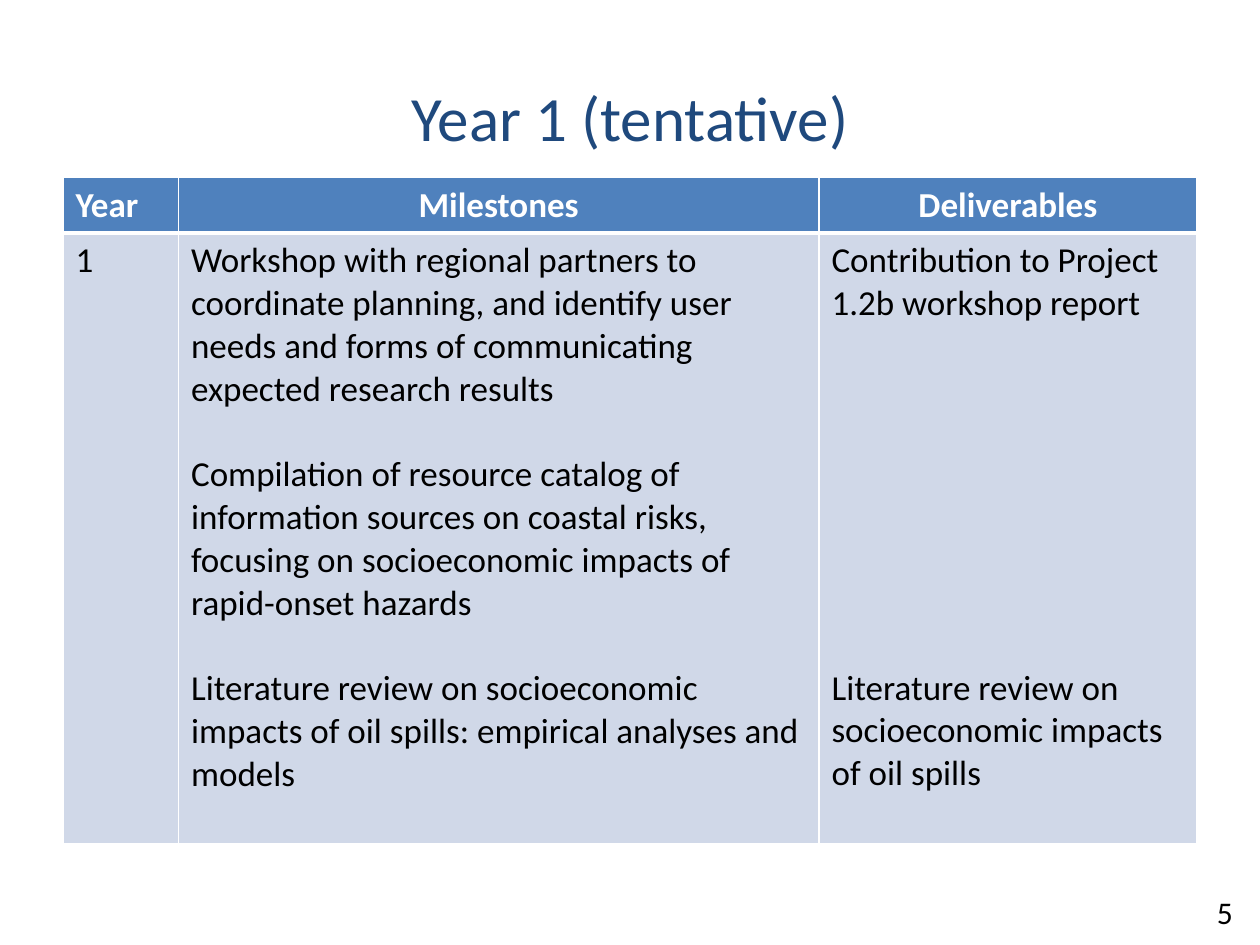
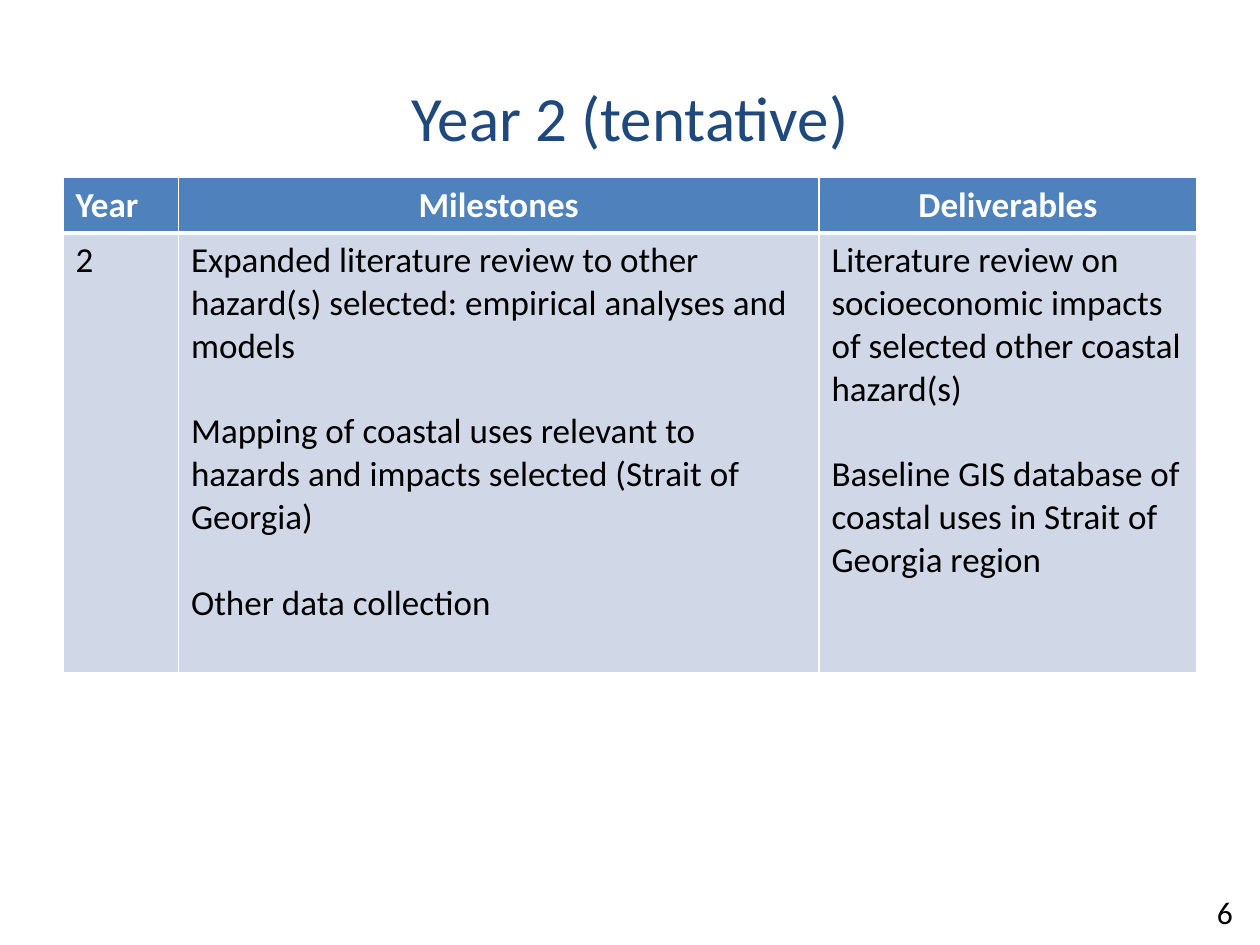
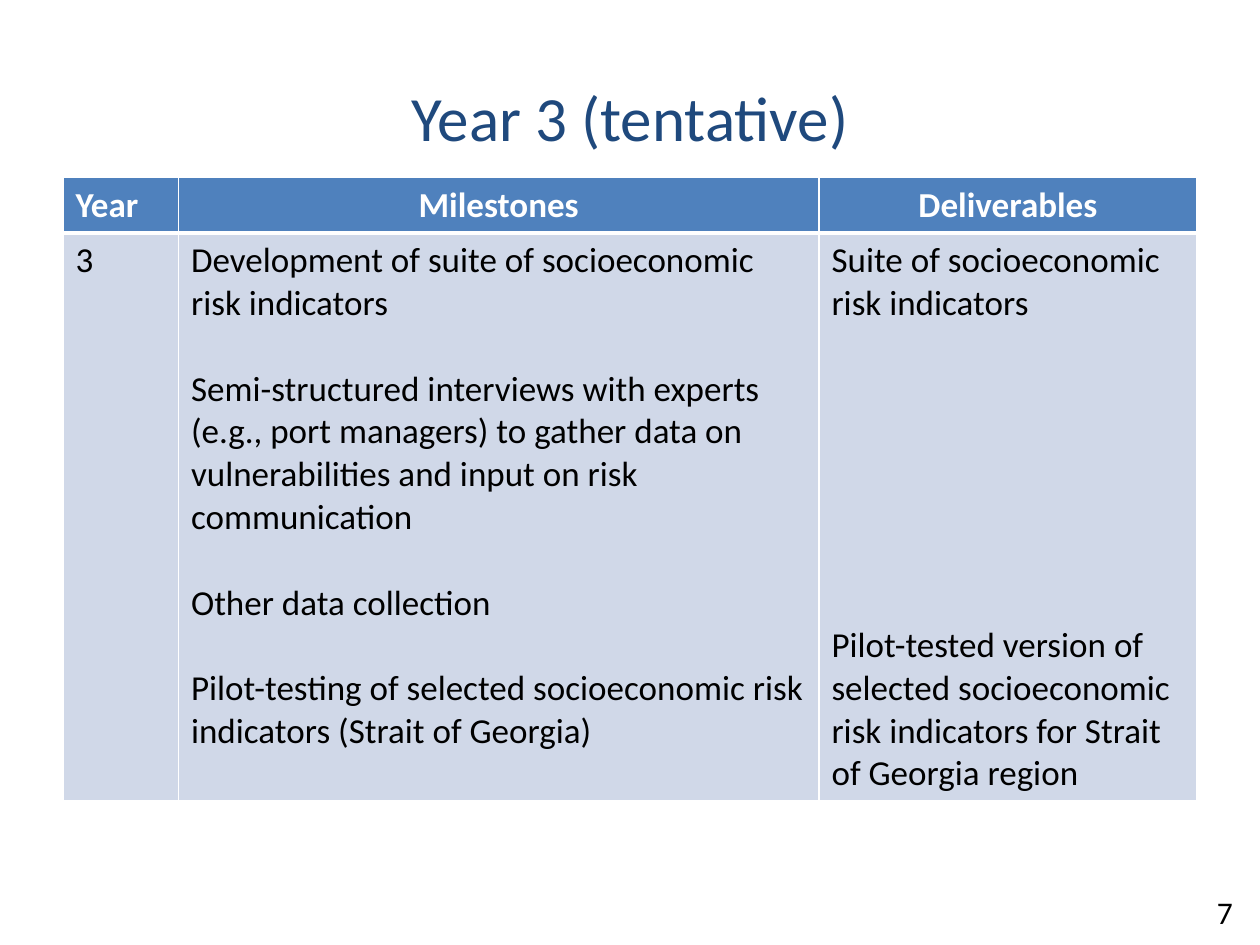
"""Build three slides of yearly milestones and deliverables."""
from dataclasses import dataclass
from typing import Any, NamedTuple

from lxml.etree import SubElement as Sub
from pptx import Presentation
from pptx.dml.color import RGBColor as Rgb
from pptx.enum.text import MSO_ANCHOR as Anchor
from pptx.enum.text import MSO_AUTO_SIZE as Fit
from pptx.enum.text import PP_ALIGN as Align
from pptx.oxml.ns import qn
from pptx.util import Pt


@dataclass(frozen=True)
class Theme:
    font: str = "Calibri"
    navy: str = "1F497D"
    blue: str = "4F81BD"
    pale: str = "D0D8E8"
    white: str = "FFFFFF"
    black: str = "000000"
    title: float = 36
    body: float = 20
    page: float = 18
    line: float = 24.41
    pad: float = 3.6
    thin: float = 1
    thick: float = 3


class Box(NamedTuple):
    left: float
    top: float
    width: float
    height: float


class Item(NamedTuple):
    text: str
    gap: int = 0


class Plan(NamedTuple):
    year: int
    page: int
    lines: int
    goals: list[Item]
    goods: list[Item]


THEME = Theme()
TITLE = Box(36, 21.6, 648, 90)
PAGE = Box(688.3, 507, 24, 29)
LEFT, TOP = 36, 101.5
COLS = (66, 366, 216)
HEADS = ("Year", "Milestones", "Deliverables")

PLANS = [
    Plan(1, 5, 14, [
        Item("Workshop with regional partners to coordinate planning, and identify user "
             "needs and forms of communicating expected research results"),
        Item("Compilation of resource catalog of information sources on coastal risks, "
             "focusing on socioeconomic impacts of rapid-onset hazards", 1),
        Item("Literature review on socioeconomic impacts of oil spills: empirical "
             "analyses and models", 1),
    ], [
        Item("Contribution to Project 1.2b workshop report"),
        Item("Literature review on socioeconomic impacts of oil spills", 8),
    ]),
    Plan(2, 6, 10, [
        Item("Expanded literature review to other hazard(s) selected: empirical "
             "analyses and models"),
        Item("Mapping of coastal uses relevant to hazards and impacts selected "
             "(Strait of Georgia)", 1),
        Item("Other data collection", 1),
    ], [
        Item("Literature review on socioeconomic impacts of selected other coastal "
             "hazard(s)"),
        Item("Baseline GIS database of coastal uses in Strait of Georgia region", 1),
    ]),
    Plan(3, 7, 13, [
        Item("Development of suite of socioeconomic risk indicators"),
        Item("Semi-structured interviews with experts (e.g., port managers) to gather "
             "data on vulnerabilities and input on risk communication", 1),
        Item("Other data collection", 1),
        Item("Pilot-testing of selected socioeconomic risk indicators "
             "(Strait of Georgia)", 1),
    ], [
        Item("Suite of socioeconomic risk indicators"),
        Item("Pilot-tested version of selected socioeconomic risk indicators for "
             "Strait of Georgia region", 7),
    ]),
]


def assign(obj: Any, **values: Any) -> None:
    for name, value in values.items():
        setattr(obj, name, value)


def write(frame: Any, items: list[Item], size: float, color: str,
          align: Align = Align.LEFT, bold: bool = False) -> None:
    for n, item in enumerate(items):
        para = frame.add_paragraph() if n else frame.paragraphs[0]
        assign(para, alignment=align, space_before=Pt(round(item.gap * THEME.line, 1)))
        run = para.add_run()
        run.text = item.text
        assign(run.font, name=THEME.font, size=Pt(size), bold=bold)
        run.font.color.rgb = Rgb.from_string(color)


def label(slide: Any, box: Box, text: str, size: float, color: str,
          align: Align, **style: Any) -> None:
    frame = slide.shapes.add_textbox(*map(Pt, box)).text_frame
    assign(frame, **style)
    write(frame, [Item(text)], size, color, align)


def edge(cell: Any, head: bool) -> None:
    props = cell._tc.get_or_add_tcPr()
    thick = "B" if head else "T"
    for side in "LRTB":
        width = THEME.thick if side == thick else THEME.thin
        line = Sub(props, qn(f"a:ln{side}"), w=str(Pt(width)))
        Sub(Sub(line, qn("a:solidFill")), qn("a:srgbClr"), val=THEME.white)


def fill(cell: Any, items: list[Item], head: bool, align: Align) -> None:
    edge(cell, head)
    cell.fill.solid()
    cell.fill.fore_color.rgb = Rgb.from_string(THEME.blue if head else THEME.pale)
    color = THEME.white if head else THEME.black
    write(cell.text_frame, items, THEME.body, color, align, head)


def grid(slide: Any, plan: Plan) -> None:
    highs = [round(n * THEME.line + 2 * THEME.pad, 1) for n in (1, plan.lines)]
    box = Box(LEFT, TOP, sum(COLS), sum(highs))
    table = slide.shapes.add_table(len(highs), len(COLS), *map(Pt, box)).table
    table.horz_banding = False
    for row, high in zip(table.rows, highs):
        row.height = Pt(high)
    body = ([Item(str(plan.year))], plan.goals, plan.goods)
    for n, (width, head, items) in enumerate(zip(COLS, HEADS, body)):
        table.columns[n].width = Pt(width)
        fill(table.cell(0, n), [Item(head)], True, Align.CENTER if n else Align.LEFT)
        fill(table.cell(1, n), items, False, Align.LEFT)


def main() -> None:
    deck = Presentation()
    assign(deck, slide_width=Pt(720), slide_height=Pt(540))
    for plan in PLANS:
        slide = deck.slides.add_slide(deck.slide_layouts[6])
        label(slide, TITLE, f"Year {plan.year} (tentative)", THEME.title, THEME.navy,
              Align.CENTER, word_wrap=True, vertical_anchor=Anchor.MIDDLE)
        grid(slide, plan)
        label(slide, PAGE, str(plan.page), THEME.page, THEME.black,
              Align.LEFT, word_wrap=False, auto_size=Fit.SHAPE_TO_FIT_TEXT)
    deck.save("out.pptx")


if __name__ == "__main__":
    main()
